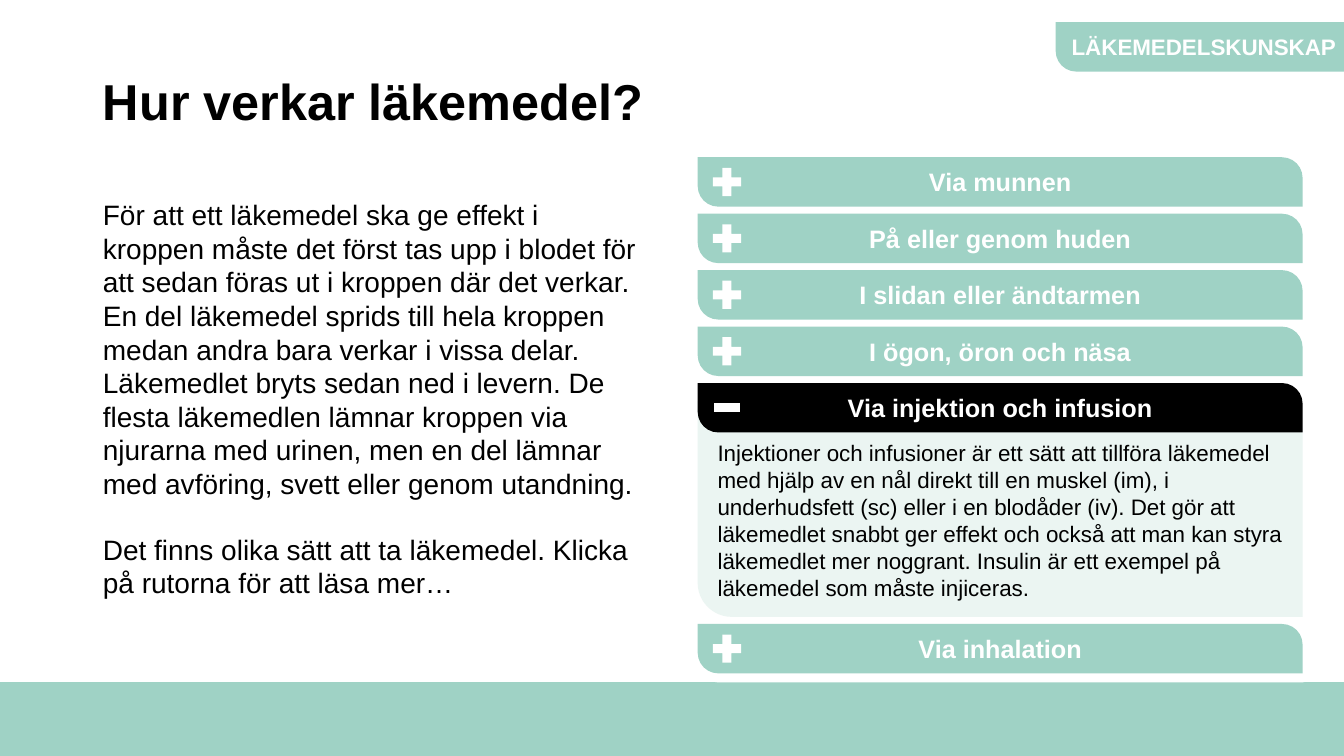
from pptx import Presentation
from pptx.dml.color import RGBColor
from pptx.enum.shapes import MSO_SHAPE as Shape
from pptx.enum.text import MSO_ANCHOR as Anchor, MSO_AUTO_SIZE as AutoSize, PP_ALIGN as Align
from pptx.oxml.ns import qn
from pptx.util import Inches, Pt

# Content
TITLE = "Hur verkar läkemedel?"
TAG = "LÄKEMEDELSKUNSKAP"
INTRO = [
    "För att ett läkemedel ska ge effekt i kroppen måste det först tas upp i blodet för "
    "att sedan föras ut i kroppen där det verkar. En del läkemedel sprids till hela kroppen "
    "medan andra bara verkar i vissa delar. Läkemedlet bryts sedan ned i levern. De flesta "
    "läkemedlen lämnar kroppen via njurarna med urinen, men en del lämnar med avföring, "
    "svett eller genom utandning.",
    "Det finns olika sätt att ta läkemedel. Klicka på rutorna för att läsa mer…",
]
INJECTION = (
    "Injektioner och infusioner är ett sätt att tillföra läkemedel med hjälp av en nål direkt "
    "till en muskel (im), i underhudsfett (sc) eller i en blodåder (iv). Det gör att läkemedlet "
    "snabbt ger effekt och också att man kan styra läkemedlet mer noggrant. Insulin är ett "
    "exempel på läkemedel som måste injiceras."
)
ROUTES = [  # heading, text shown when the route is open
    ("Via munnen", None),
    ("På eller genom huden", None),
    ("I slidan eller ändtarmen", None),
    ("I ögon, öron och näsa", None),
    ("Via injektion och infusion", INJECTION),
    ("Via inhalation", None),
]

# Formats and measures in inches
COLORS = {"mint": "9FD2C5", "pale": "EBF5F2", "black": "000000", "white": "FFFFFF"}
FORMATS = {
    "title": {"size": Pt(36), "bold": True},
    "intro": {"size": Pt(20), "bold": False},
    "tag": {"size": Pt(16), "bold": True},
    "route": {"size": Pt(18), "bold": True},
    "panel": {"size": Pt(16), "bold": False},
}
SLIDE_W, SLIDE_H = 13.33, 7.5
TAB_X, TAB_Y, TAB_W, TAB_H, GAP = 6.92, 1.56, 6, 0.49, 0.07
PANEL_H, PANEL_OFFSET = 2.14, 0.18
TAB_ROUND, PANEL_ROUND = 0.417, 0.158
ICON_X = TAB_X + 0.29  # centre of the plus and minus signs

prs = Presentation()
prs.slide_width, prs.slide_height = Inches(SLIDE_W), Inches(SLIDE_H)
slide = prs.slides.add_slide(prs.slide_layouts[1])


def rgb(color):
    return RGBColor.from_string(COLORS[color])


def add_block(kind, box, fill, rounding=None, line=None, line_width=1):
    block = slide.shapes.add_shape(kind, *map(Inches, box))
    block.shadow.inherit = False
    block.fill.solid()
    block.fill.fore_color.rgb = rgb(fill)
    if line:
        block.line.color.rgb = rgb(line)
        block.line.width = Pt(line_width)
    else:
        block.line.fill.background()
    if rounding is not None:
        block.adjustments[0], block.adjustments[1] = 0, rounding
    return block


def write(holder, texts, style, color, anchor, align=Align.LEFT):
    frame = holder.text_frame
    frame.word_wrap = True
    frame.auto_size = AutoSize.NONE
    frame.vertical_anchor = anchor
    frame.text = "\n".join(texts)
    for paragraph in frame.paragraphs:
        paragraph.alignment = align
        paragraph.space_before = Pt(0)
        font = paragraph.runs[0].font
        font.name = "Arial"
        font.color.rgb = rgb(color)
        for attribute, value in FORMATS[style].items():
            setattr(font, attribute, value)


def place(holder, box):
    holder.left, holder.top, holder.width, holder.height = map(Inches, box)


# Bottom band
add_block(Shape.RECTANGLE, (0, 6.77, SLIDE_W, 0.73), "mint", line="mint")

# Title and introduction
title, intro = slide.placeholders
place(title, (0.92, 0.71, 11.5, 1.1))
write(title, [TITLE], "title", "black", Anchor.TOP)
title.text_frame.paragraphs[0].line_spacing = 0.9

place(intro, (0.92, 1.91, 5.5, 4.14))
write(intro, INTRO, "intro", "black", Anchor.TOP)
for paragraph in intro.text_frame.paragraphs:
    properties = paragraph._p.get_or_add_pPr()
    properties.set("marL", "0")
    properties.set("indent", "0")
    properties.append(properties.makeelement(qn("a:buNone"), {}))
intro.text_frame.paragraphs[0].space_after = Pt(23)

# Subject tag running off the right edge
tag = add_block(Shape.ROUND_2_DIAG_RECTANGLE, (10.47, 0.22, 3.62, TAB_H), "mint", TAB_ROUND)
write(tag, [TAG], "tag", "white", Anchor.MIDDLE)

# Routes as an accordion
top = TAB_Y
for route, detail in ROUTES:
    tab_box = (TAB_X, top, TAB_W, TAB_H)
    bottom = top + TAB_H
    if detail:
        panel_top = top + PANEL_OFFSET
        panel = add_block(Shape.ROUND_2_DIAG_RECTANGLE, (TAB_X, panel_top, TAB_W, PANEL_H),
                          "pale", PANEL_ROUND)
        write(panel, [detail], "panel", "black", Anchor.TOP)
        panel.text_frame.margin_top = Inches(0.28)
        bottom = panel_top + PANEL_H
    if route == ROUTES[-1][0]:  # white rim against the bottom band
        add_block(Shape.ROUND_2_DIAG_RECTANGLE, (TAB_X, top + 0.02, TAB_W, TAB_H),
                  "white", TAB_ROUND, "white", 10)
    tab = add_block(Shape.ROUND_2_DIAG_RECTANGLE, tab_box, "black" if detail else "mint", TAB_ROUND)
    write(tab, [route], "route", "white", Anchor.MIDDLE, Align.CENTER)
    sign, size = (Shape.MATH_MINUS, 0.36) if detail else (Shape.MATH_PLUS, 0.38)
    add_block(sign, (ICON_X - size / 2, top + (TAB_H - size) / 2, size, size), "white")
    top = bottom + GAP

prs.save("out.pptx")
